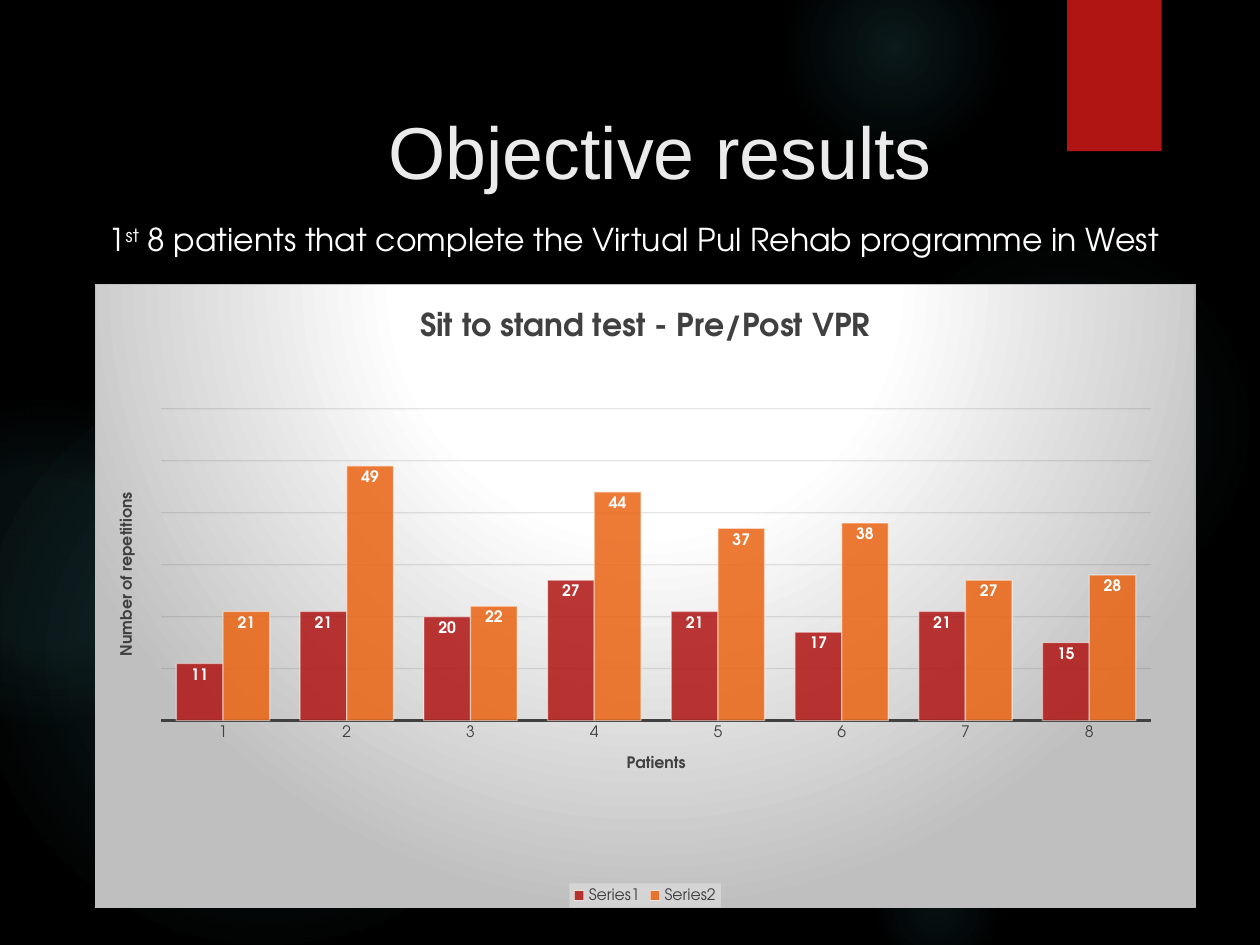
from dataclasses import dataclass

from lxml.etree import SubElement
from pptx import Presentation
from pptx.chart.data import CategoryChartData
from pptx.dml.color import RGBColor
from pptx.enum.chart import XL_CHART_TYPE as CT, XL_LABEL_POSITION as LP
from pptx.enum.chart import XL_LEGEND_POSITION as LEG, XL_TICK_MARK as TICK
from pptx.enum.shapes import MSO_SHAPE as SHAPE
from pptx.enum.text import MSO_ANCHOR as ANCHOR, PP_ALIGN as ALIGN
from pptx.oxml import parse_xml
from pptx.oxml.ns import nsdecls, qn
from pptx.util import Inches, Pt


@dataclass(frozen=True)
class Theme:
    """Colours, fonts and type sizes of the slide."""
    back: str = "000000"
    glow: str = "50B9C1"
    red: str = "B01513"
    orange: str = "EA6312"
    white: str = "FFFFFF"
    title: str = "EBEBEB"
    ink: str = "404040"
    grid: str = "0D0D0D"
    edge: str = "BFBFBF"
    legend: str = "F2F2F2"
    title_font: str = "Arial"
    body_font: str = "TeX Gyre Adventor"
    title_size: int = 42
    body_size: int = 18
    label_size: int = 9


T = Theme()
GLOWS = [
    (6.89, 1.83, 3.08, [(0, 7), (36, 6), (69, 0)]),
    (6.22, -0.5, 1.75, [(0, 14), (36, 7), (73, 0)]),
    (6.89, 6.67, 1.08, [(0, 9), (36, 5), (66, 0)]),
    (-0.17, 2.92, 4.58, [(0, 11), (36, 10), (75, 0)]),
    (-0.92, 3.17, 2.58, [(0, 8), (36, 8), (72, 0)]),
]
SERIES = [
    ("Series1", (11, 21, 20, 27, 21, 17, 21, 15), T.red),
    ("Series2", (21, 49, 22, 44, 37, 38, 27, 28), T.orange),
]


def rgb(code):
    """Return the colour for a hex code."""
    return RGBColor.from_string(code)


def set_attrs(obj, **values):
    """Set each named attribute on an object."""
    for name, value in values.items():
        setattr(obj, name, value)


def style_font(font, size, color, name=T.body_font, bold=False):
    """Give a font its face, size, weight and colour."""
    set_attrs(font, name=name, size=Pt(size), bold=bold)
    font.color.rgb = rgb(color)


def paint(fill, color, alpha=100):
    """Fill with a solid colour at a percentage of opacity."""
    fill.solid()
    fill.fore_color.rgb = rgb(color)
    if alpha < 100:
        clr = fill._xPr.find(".//" + qn("a:srgbClr"))
        SubElement(clr, qn("a:alpha"), val=str(alpha * 1000))


def stroke(line, color, width, alpha=100):
    """Draw a line in a colour, width and opacity."""
    line.width = Pt(width)
    paint(line.fill, color, alpha)


def radial(stops, box):
    """Return a circular gradient from (position, colour, alpha) stops."""
    gs = "".join(
        f'<a:gs pos="{pos * 1000}"><a:srgbClr val="{color}">'
        f'<a:alpha val="{alpha * 1000}"/></a:srgbClr></a:gs>'
        for pos, color, alpha in stops)
    rect = " ".join(f'{side}="{v * 1000}"' for side, v in zip("ltrb", box))
    return parse_xml(
        f'<a:gradFill {nsdecls("a")} rotWithShape="1"><a:gsLst>{gs}</a:gsLst>'
        f'<a:path path="circle"><a:fillToRect {rect}/></a:path></a:gradFill>')


def add_plain_shape(slide, kind, left, top, width, height):
    """Add a shape without outline or shadow."""
    sp = slide.shapes.add_shape(kind, *map(Inches, (left, top, width, height)))
    sp.shadow.inherit = False
    sp.line.fill.background()
    return sp


def add_glow(slide, left, top, size, stops):
    """Add a soft round glow."""
    sp = add_plain_shape(slide, SHAPE.OVAL, left, top, size, size)
    grad = radial([(pos, T.glow, alpha) for pos, alpha in stops], [50] * 4)
    sp.element.spPr.find(qn("a:prstGeom")).addnext(grad)


def add_title(slide, text):
    """Place and format the slide title."""
    sp = slide.shapes.title
    slide.shapes.element.append(sp.element)
    set_attrs(sp, left=Inches(1.38), top=Inches(0.72),
              width=Inches(7.72), height=Inches(1.53))
    tf = sp.text_frame
    set_attrs(tf, text=text, vertical_anchor=ANCHOR.TOP, margin_top=Inches(0.12))
    p = tf.paragraphs[0]
    p.alignment = ALIGN.CENTER
    style_font(p.runs[0].font, T.title_size, T.title, T.title_font)


def add_subtitle(slide, parts):
    """Add a line of text from (text, baseline percentage) parts."""
    box = slide.shapes.add_textbox(*map(Inches, (0.76, 1.7, 8.74, 0.4)))
    box.text_frame.word_wrap = True
    p = box.text_frame.paragraphs[0]
    for text, base in parts:
        r = p.add_run()
        r.text = text
        style_font(r.font, T.body_size, T.white)
        if base:
            r._r.get_or_add_rPr().set("baseline", str(base * 1000))


def set_heading(owner, tf, text, size):
    """Write a bold chart or axis title."""
    tf.text = text
    style_font(tf.paragraphs[0].runs[0].font, size, T.ink, bold=True)


def style_axes(chart):
    """Format both axes, their titles and the gridlines."""
    cat, val = chart.category_axis, chart.value_axis
    set_attrs(cat, major_tick_mark=TICK.NONE, minor_tick_mark=TICK.NONE)
    style_font(cat.tick_labels.font, T.label_size, T.ink)
    stroke(cat.format.line, T.ink, 1.5)
    set_attrs(val, minimum_scale=0, maximum_scale=60, major_unit=10,
              has_major_gridlines=True, visible=False)
    stroke(val.major_gridlines.format.line, T.grid, 0.75, 10)
    for axis, text in ((cat, "Patients"), (val, "Number of repetitions")):
        set_heading(axis, axis.axis_title.text_frame, text, T.label_size)


def style_series(series, color):
    """Format the columns and value labels of a series."""
    set_attrs(series, smooth=False) if hasattr(series, "smooth") else None
    paint(series.format.fill, color, 85)
    stroke(series.format.line, T.white, 0.75, 50)
    labels = series.data_labels
    set_attrs(labels, show_value=True, position=LP.INSIDE_END)
    style_font(labels.font, T.label_size, T.white, bold=True)


def style_legend(chart):
    """Put a pale legend at the bottom of the chart."""
    chart.has_legend = True
    legend = chart.legend
    set_attrs(legend, position=LEG.BOTTOM, include_in_layout=False)
    style_font(legend.font, T.label_size, T.ink)
    legend._element.find(qn("c:overlay")).addnext(parse_xml(
        f'<c:spPr {nsdecls("c", "a")}><a:solidFill><a:srgbClr val="{T.legend}">'
        '<a:alpha val="39000"/></a:srgbClr></a:solidFill></c:spPr>'))


def style_chart_area(chart, plot_box):
    """Set the chart background and the inner plot position."""
    sp_pr = parse_xml(
        f'<c:spPr {nsdecls("c", "a")}><a:ln w="9525"><a:solidFill>'
        f'<a:srgbClr val="{T.edge}"/></a:solidFill></a:ln></c:spPr>')
    stops = [(0, T.white, 100), (39, T.white, 100), (100, T.edge, 100)]
    sp_pr.insert(0, radial(stops, (50, -80, 50, 180)))
    chart.element.find(qn("c:chart")).addnext(sp_pr)
    area = chart.element.find(".//" + qn("c:plotArea"))
    for old in area.findall(qn("c:layout")):
        area.remove(old)
    modes = '<c:xMode val="edge"/><c:yMode val="edge"/>'
    sizes = "".join(f'<c:{k} val="{v}"/>' for k, v in zip("xywh", plot_box))
    area.insert(0, parse_xml(
        f'<c:layout {nsdecls("c")}><c:manualLayout><c:layoutTarget val="inner"/>'
        f'{modes}{sizes}</c:manualLayout></c:layout>'))


def add_results_chart(slide):
    """Add the clustered columns of results before and after the programme."""
    data = CategoryChartData()
    data.categories = [str(n) for n in range(1, 9)]
    for name, values, _ in SERIES:
        data.add_series(name, values)
    chart = slide.shapes.add_chart(
        CT.COLUMN_CLUSTERED, *map(Inches, (0.75, 2.25, 8.74, 4.96)), data).chart
    style_font(chart.font, 10, T.white)
    set_heading(chart, chart.chart_title.text_frame,
                "Sit to stand test - Pre/Post VPR", T.body_size)
    plot = chart.plots[0]
    set_attrs(plot, gap_width=65, overlap=0, vary_by_categories=False)
    for series, (_, _, color) in zip(plot.series, SERIES):
        style_series(series, color)
    style_axes(chart)
    style_legend(chart)
    style_chart_area(chart, (0.06, 0.2, 0.9, 0.5))


def main():
    """Build and save the slide."""
    prs = Presentation()
    set_attrs(prs, slide_width=Inches(10), slide_height=Inches(7.5))
    slide = prs.slides.add_slide(prs.slide_layouts[5])
    paint(slide.background.fill, T.back)
    for glow in GLOWS:
        add_glow(slide, *glow)
    paint(add_plain_shape(slide, SHAPE.RECTANGLE, 8.47, 0, 0.75, 1.2).fill, T.red)
    add_title(slide, "Objective results")
    add_results_chart(slide)
    add_subtitle(slide, [
        ("1", 0), ("st", 30),
        (" 8 patients that complete the Virtual Pul Rehab programme in West", 0)])
    prs.save("out.pptx")


if __name__ == "__main__":
    main()
